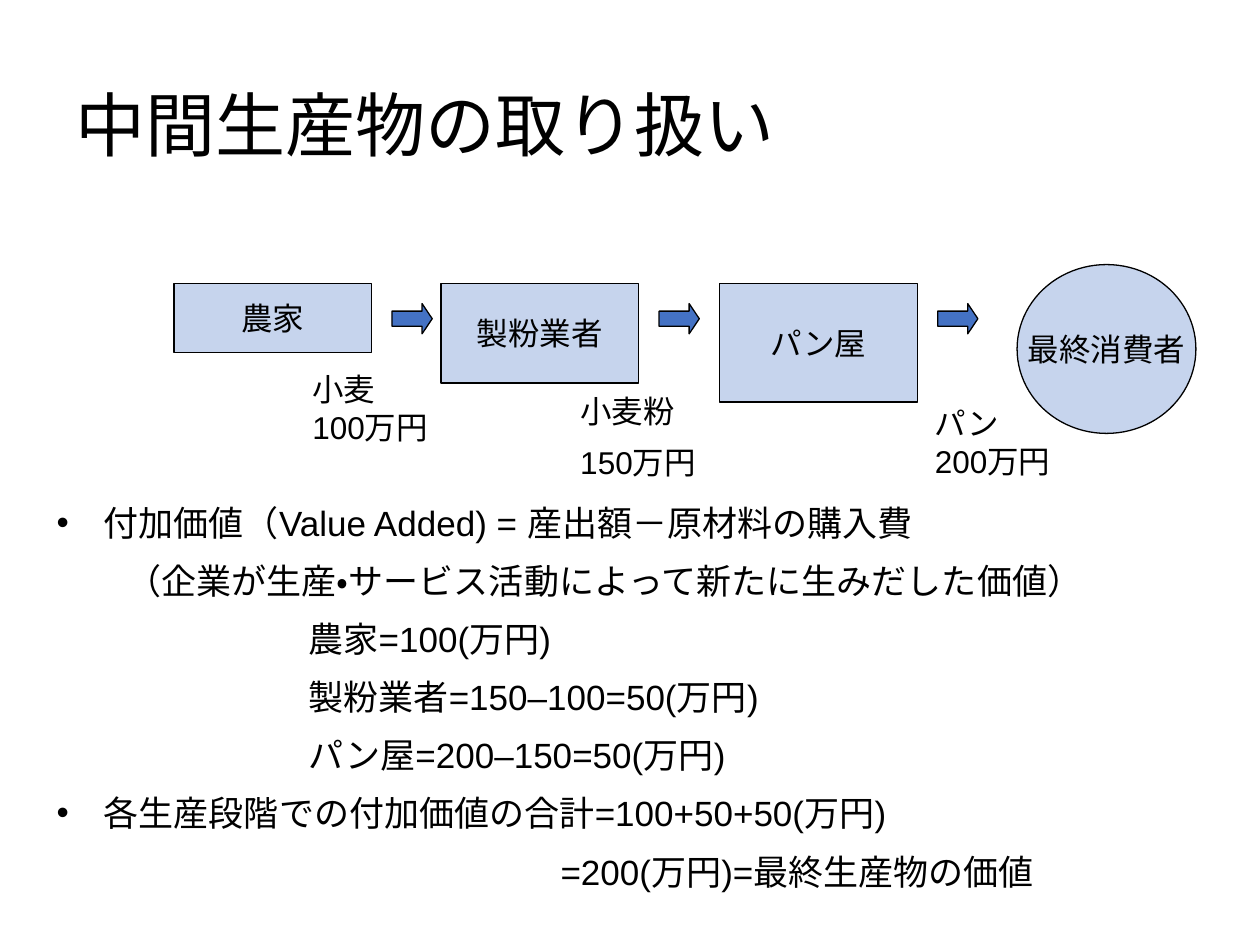
from collections import namedtuple

from lxml import etree
from pptx import Presentation
from pptx.dml import color
from pptx.enum import lang, shapes, text
from pptx.oxml import ns
from pptx.util import Pt

COLORS = {"ink": "000000", "blue": "4472C4", "paper": "FFFFFF"}
LATIN_FONT = "Arial"
TITLE_FONT = "Noto Sans CJK JP"

Box = namedtuple("Box", "left top width height")
Stage = namedtuple("Stage", "name left height label label_left label_top")

STAGES = [
    Stage("農家", 0, 39.6, ["小麦　100万円"], 72, 46),
    Stage("製粉業者", 152.6, 56.9, ["小麦粉", "150万円"], 72.5, 58.3),
    Stage("パン屋", 311.8, 67.7, ["パン　200万円"], 116, 65.5),
]
NOTES = [
    ("付加価値（Value Added) = 産出額－原材料の購入費", 0, True),
    ("（企業が生産・サービス活動によって新たに生みだした価値）", 40, False),
    ("農家=100(万円)", 144, False),
    ("製粉業者=150–100=50(万円)", 144, False),
    ("パン屋=200–150=50(万円)", 144, False),
    ("各生産段階での付加価値の合計=100+50+50(万円)", 0, True),
    ("=200(万円)=最終生産物の価値", 288, False),
]


def rgb(name):
    return color.RGBColor.from_string(COLORS[name])


def points(box):
    return [Pt(length) for length in box]


def write(para, words, size=18, font=LATIN_FONT, align=text.PP_ALIGN.LEFT,
          before=0, indent=0, bullet=False):
    para.alignment = align
    para.space_before = Pt(before)
    span = para.add_run()
    span.text = words
    span.font.size = Pt(size)
    span.font.name = font
    span.font.color.rgb = rgb("ink")
    span.font.language_id = lang.MSO_LANGUAGE_ID.JAPANESE
    props = para._p.get_or_add_pPr()
    hanging = 27 if bullet else 0
    props.set("marL", str(Pt(indent + hanging)))
    props.set("indent", str(-Pt(hanging)))
    if bullet:
        etree.SubElement(props, ns.qn("a:buFont"), typeface=LATIN_FONT)
        etree.SubElement(props, ns.qn("a:buChar"), char="•")
    return span


def add_text_frame(page, box):
    frame = page.shapes.add_textbox(*points(box)).text_frame
    frame.word_wrap = True
    return frame


def add_figure(page, kind, box, words="", alpha=100):
    figure = page.shapes.add_shape(kind, *points(box))
    figure.shadow.inherit = False
    figure.fill.solid()
    figure.fill.fore_color.rgb = rgb("blue")
    if alpha < 100:
        tint = figure.fill._xPr.find(".//" + ns.qn("a:srgbClr"))
        etree.SubElement(tint, ns.qn("a:alpha"), val=str(alpha * 1000))
    figure.line.color.rgb = rgb("ink")
    figure.line.width = Pt(0.75)
    if words:
        frame = figure.text_frame
        frame.word_wrap = False
        frame.vertical_anchor = text.MSO_ANCHOR.MIDDLE
        write(frame.paragraphs[0], words, align=text.PP_ALIGN.CENTER)
    return figure


def add_title(page, box, words):
    title = page.shapes.title
    title.left, title.top, title.width, title.height = points(box)
    frame = title.text_frame
    frame.vertical_anchor = text.MSO_ANCHOR.MIDDLE
    para = frame.paragraphs[0]
    para.line_spacing = 0.9
    span = write(para, words, size=40, font=TITLE_FONT)
    etree.SubElement(span.font._element, ns.qn("a:ea"), typeface=TITLE_FONT)


def add_stage(page, box, stage):
    add_figure(page, shapes.MSO_SHAPE.RECTANGLE, box, stage.name, alpha=30)
    arrow_box = Box(box.left + box.width + 11.6, box.top + 11.5, 23, 17.3)
    arrow = add_figure(page, shapes.MSO_SHAPE.RIGHT_ARROW, arrow_box)
    arrow.adjustments[0] = 0.5
    arrow.adjustments[1] = 0.335
    label_box = Box(box.left + stage.label_left, box.top + stage.label_top,
                    88, 26 * len(stage.label))
    frame = add_text_frame(page, label_box)
    for number, words in enumerate(stage.label):
        para = frame.add_paragraph() if number else frame.paragraphs[0]
        write(para, words, before=8 if number else 0)


def add_flow(page, box):
    for stage in STAGES:
        stage_box = Box(box.left + stage.left, box.top + 10.8, 113, stage.height)
        add_stage(page, stage_box, stage)
    consumer_box = Box(box.left + box.width - 102.2, box.top, 102.2, 96.5)
    add_figure(page, shapes.MSO_SHAPE.OVAL, consumer_box, "最終消費者", alpha=30)


def add_notes(page, box):
    frame = add_text_frame(page, box)
    for number, (words, indent, bullet) in enumerate(NOTES):
        para = frame.add_paragraph() if number else frame.paragraphs[0]
        write(para, words, size=20, before=9.2 if number else 0,
              indent=indent, bullet=bullet)


def main():
    deck = Presentation()
    deck.slide_width, deck.slide_height = Pt(720), Pt(540)
    page = deck.slides.add_slide(deck.slide_layouts[5])
    page.background.fill.solid()
    page.background.fill.fore_color.rgb = rgb("paper")
    add_title(page, Box(36, 36, 505.4, 75.6), "中間生産物の取り扱い")
    add_flow(page, Box(99.4, 151.2, 584, 130))
    add_notes(page, Box(25.2, 283, 669, 250))
    deck.save("out.pptx")


if __name__ == "__main__":
    main()
